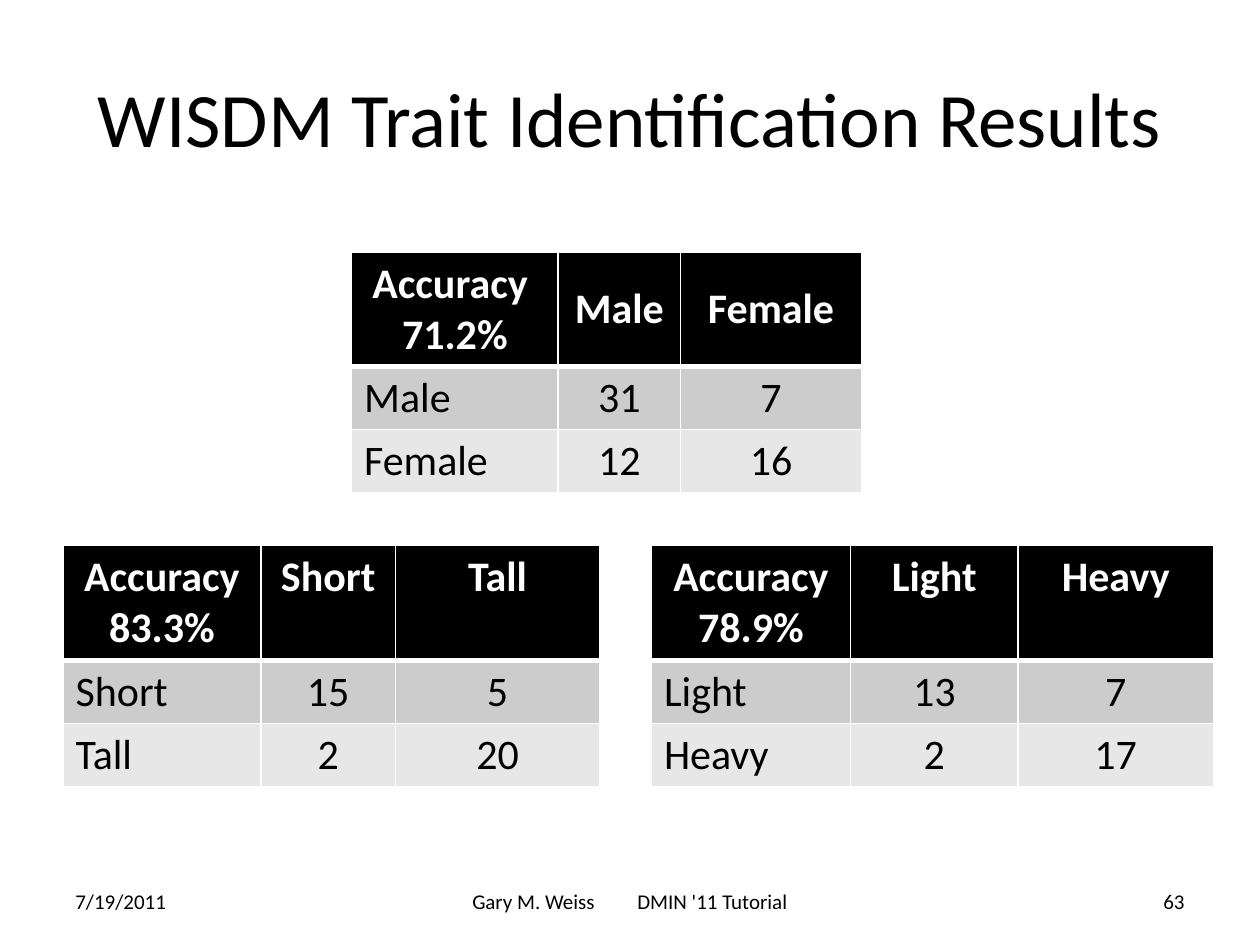
"""Build a slide with three trait confusion tables."""
from lxml.etree import SubElement
from pptx import Presentation
from pptx.dml.color import RGBColor
from pptx.enum.text import MSO_ANCHOR, PP_ALIGN
from pptx.oxml.ns import qn
from pptx.util import Inches, Pt

BLACK = RGBColor(0x00, 0x00, 0x00)
WHITE = RGBColor(0xFF, 0xFF, 0xFF)
DARK = RGBColor(0xCC, 0xCC, 0xCC)
LIGHT = RGBColor(0xE7, 0xE7, 0xE7)
FILLS = [BLACK, DARK, LIGHT]
HEIGHTS = [0.91, 0.5, 0.5]
LEFT, MID, RIGHT = PP_ALIGN.LEFT, PP_ALIGN.CENTER, PP_ALIGN.RIGHT


def write(frame, text, size=24, color=BLACK, bold=False, align=MID):
    frame.word_wrap = True
    para = frame.paragraphs[0]
    para.text = text
    para.alignment = align
    for run in para.runs:
        font = run.font
        font.name, font.size, font.bold = "Calibri", Pt(size), bold
        font.color.rgb = color
    return para


def edge(cell, side, width):
    props = cell._tc.get_or_add_tcPr()
    line = SubElement(props, qn(f"a:ln{side}"), w=str(Pt(width)))
    fill = SubElement(line, qn("a:solidFill"))
    SubElement(fill, qn("a:srgbClr"), val=str(WHITE))


deck = Presentation()
deck.slide_width, deck.slide_height = Inches(10), Inches(7.5)
slide = deck.slides.add_slide(deck.slide_layouts[6])

labels = [
    ("WISDM Trait Identification Results", 0.5, 0.3, 9, 1.25, 44, MID),
    ("7/19/2011", 0.5, 6.95, 2.33, 0.4, 12, LEFT),
    ("Gary M. Weiss\tDMIN '11 Tutorial", 3.65, 6.95, 2.94, 0.4, 12, LEFT),
    ("63", 7.17, 6.95, 2.33, 0.4, 12, RIGHT),
]
for text, x, y, w, h, size, align in labels:
    box = slide.shapes.add_textbox(Inches(x), Inches(y), Inches(w), Inches(h))
    box.text_frame.vertical_anchor = MSO_ANCHOR.MIDDLE
    para = write(box.text_frame, text, size=size, align=align)
    if "\t" in text:
        tabs = SubElement(para._p.get_or_add_pPr(), qn("a:tabLst"))
        SubElement(tabs, qn("a:tab"), pos=str(Inches(1.31)), algn="l")

tables = [
    (2.79, 2, [1.64, 0.97, 1.44], MSO_ANCHOR.MIDDLE,
     [["Accuracy \v71.2%", "Male", "Female"],
      ["Male", "31", "7"], ["Female", "12", "16"]]),
    (0.5, 4.33, [1.57, 1.07, 1.62], MSO_ANCHOR.TOP,
     [["Accuracy\v83.3%", "Short", "Tall"],
      ["Short", "15", "5"], ["Tall", "2", "20"]]),
    (5.17, 4.33, [1.58, 1.33, 1.55], MSO_ANCHOR.TOP,
     [["Accuracy\v78.9%", "Light", "Heavy"],
      ["Light", "13", "7"], ["Heavy", "2", "17"]]),
]
for x, y, widths, anchor, rows in tables:
    grid = slide.shapes.add_table(
        3, 3, Inches(x), Inches(y), Inches(sum(widths)), Inches(sum(HEIGHTS))
    ).table
    for col, width in zip(grid.columns, widths):
        col.width = Inches(width)
    for r, row in enumerate(rows):
        grid.rows[r].height = Inches(HEIGHTS[r])
        head = r == 0
        for c, text in enumerate(row):
            cell = grid.cell(r, c)
            for side in "LRTB":
                thick = (r, side) in [(0, "B"), (1, "T")]
                edge(cell, side, 3 if thick else 1)
            cell.fill.solid()
            cell.fill.fore_color.rgb = FILLS[r]
            cell.vertical_anchor = anchor if head else MSO_ANCHOR.TOP
            write(cell.text_frame, text, color=WHITE if head else BLACK,
                  bold=head, align=MID if head or c else LEFT)

deck.save("out.pptx")
